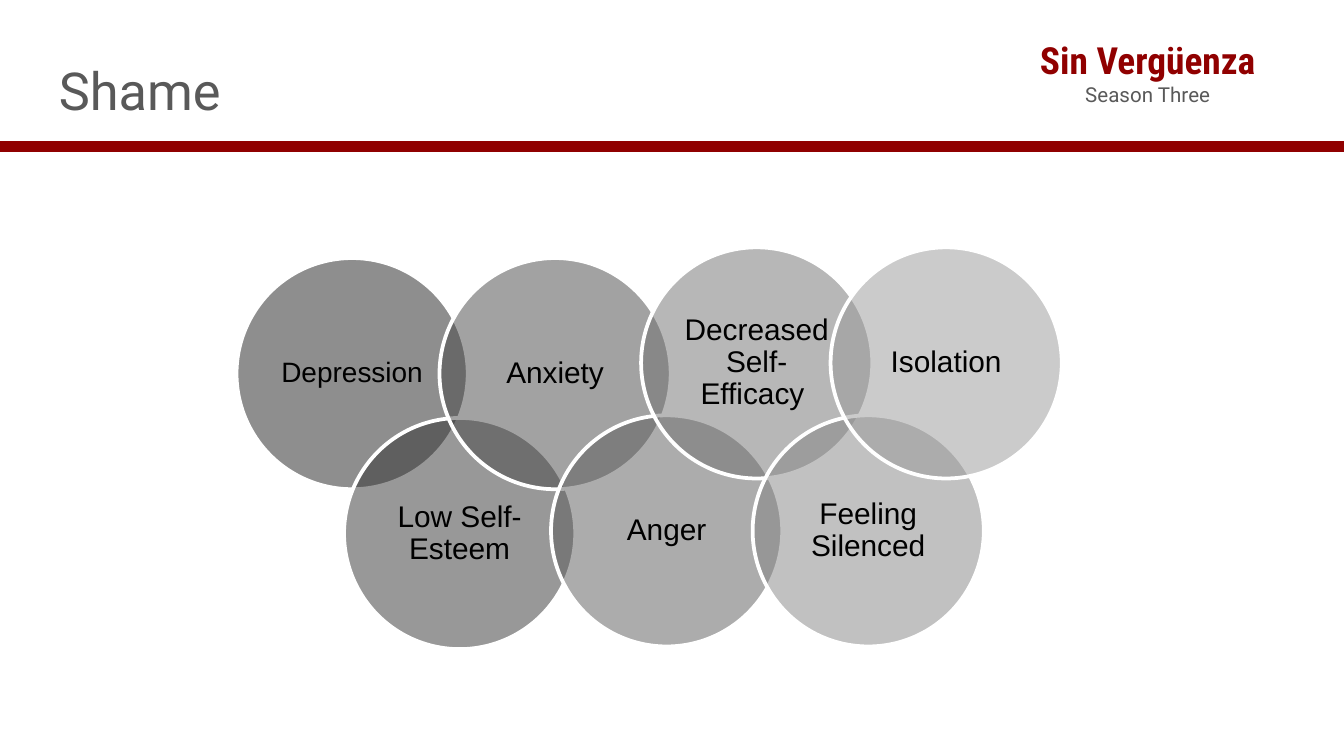
import pptx
import pptx.dml.color
import pptx.enum.shapes
import pptx.enum.text
import pptx.oxml
import pptx.util
import lxml.etree
from dataclasses import dataclass
from pptx.util import Inches


@dataclass(frozen=True)
class Theme:
    red: str = "900000"
    gray: str = "595959"
    black: str = "000000"
    white: str = "FFFFFF"
    title_size: int = 28
    show_size: int = 20
    season_size: int = 11
    label_size: int = 16
    small_label_size: int = 15


theme = Theme()


def rgb(value):
    return pptx.dml.color.RGBColor.from_string(value)


def write(paragraph, text, *, size, font, color, bold=False, centered=False, spacing=None):
    paragraph.text = text
    paragraph.font.size = pptx.util.Pt(size)
    paragraph.font.name = font
    paragraph.font.bold = bold
    paragraph.font.color.rgb = rgb(color)
    if centered:
        paragraph.alignment = pptx.enum.text.PP_ALIGN.CENTER
    if spacing:
        paragraph.line_spacing = spacing


presentation = pptx.Presentation()
presentation.slide_width = Inches(10)
presentation.slide_height = Inches(10 * 9 / 16)
slide = presentation.slides.add_slide(presentation.slide_layouts[6])

diameter = 1.72
label_offset = 0.25
label_side = diameter - 2 * label_offset
circles = [
    ("Depression", 1.76, 1.92, theme.small_label_size, 0.06),
    ("Low Self-Esteem", 2.56, 3.11, theme.label_size, 0.07),
    ("Anxiety", 3.27, 1.92, theme.label_size, 0.07),
    ("Anger", 4.1, 3.09, theme.label_size, 0.07),
    ("Decreased Self-Efficacy ", 4.77, 1.84, theme.label_size, 0.07),
    ("Feeling Silenced", 5.6, 3.09, theme.label_size, 0.07),
    ("Isolation", 6.18, 1.84, theme.label_size, 0.07),
]

for index, (label, left, top, size, inset) in enumerate(circles):
    circle = slide.shapes.add_shape(
        pptx.enum.shapes.MSO_SHAPE.OVAL,
        Inches(left), Inches(top), Inches(diameter), Inches(diameter),
    )
    circle.shadow.inherit = False
    circle.fill.solid()
    level = round(30 + 20.4 * index)
    circle.fill.fore_color.rgb = pptx.dml.color.RGBColor(level, level, level)
    color_element = circle._element.spPr.find(".//" + pptx.oxml.ns.qn("a:srgbClr"))
    lxml.etree.SubElement(color_element, pptx.oxml.ns.qn("a:alpha"), val="50000")
    circle.line.color.rgb = rgb(theme.white)
    circle.line.width = pptx.util.Pt(2)

    label_box = slide.shapes.add_textbox(
        Inches(left + label_offset), Inches(top + label_offset),
        Inches(label_side), Inches(label_side),
    )
    frame = label_box.text_frame
    frame.word_wrap = True
    frame.vertical_anchor = pptx.enum.text.MSO_ANCHOR.MIDDLE
    frame.margin_left = frame.margin_right = Inches(inset)
    frame.margin_top = frame.margin_bottom = Inches(inset)
    write(frame.paragraphs[0], label, size=size, font="Arial",
          color=theme.black, centered=True, spacing=0.9)

title_box = slide.shapes.add_textbox(Inches(0.34), Inches(0.33), Inches(9.32), Inches(0.63))
title_frame = title_box.text_frame
title_frame.word_wrap = True
title_frame.margin_top = title_frame.margin_bottom = Inches(0.1)
write(title_frame.paragraphs[0], "Shame", size=theme.title_size, font="Roboto", color=theme.gray)

rule = slide.shapes.add_connector(
    pptx.enum.shapes.MSO_CONNECTOR.STRAIGHT,
    Inches(0), Inches(1.09), Inches(10), Inches(1.09),
)
rule.line.color.rgb = rgb(theme.red)
rule.line.width = pptx.util.Pt(6)
lxml.etree.SubElement(rule._element.spPr, pptx.oxml.ns.qn("a:effectLst"))

show_box = slide.shapes.add_textbox(Inches(7.33), Inches(0.23), Inches(2.42), Inches(0.64))
show_frame = show_box.text_frame
show_frame.word_wrap = True
show_frame.auto_size = pptx.enum.text.MSO_AUTO_SIZE.SHAPE_TO_FIT_TEXT
write(show_frame.paragraphs[0], "Sin Vergüenza", size=theme.show_size,
      font="Roboto Condensed", color=theme.red, bold=True, centered=True)
write(show_frame.add_paragraph(), "Season Three", size=theme.season_size,
      font="Roboto", color=theme.gray, centered=True)

presentation.save("out.pptx")
